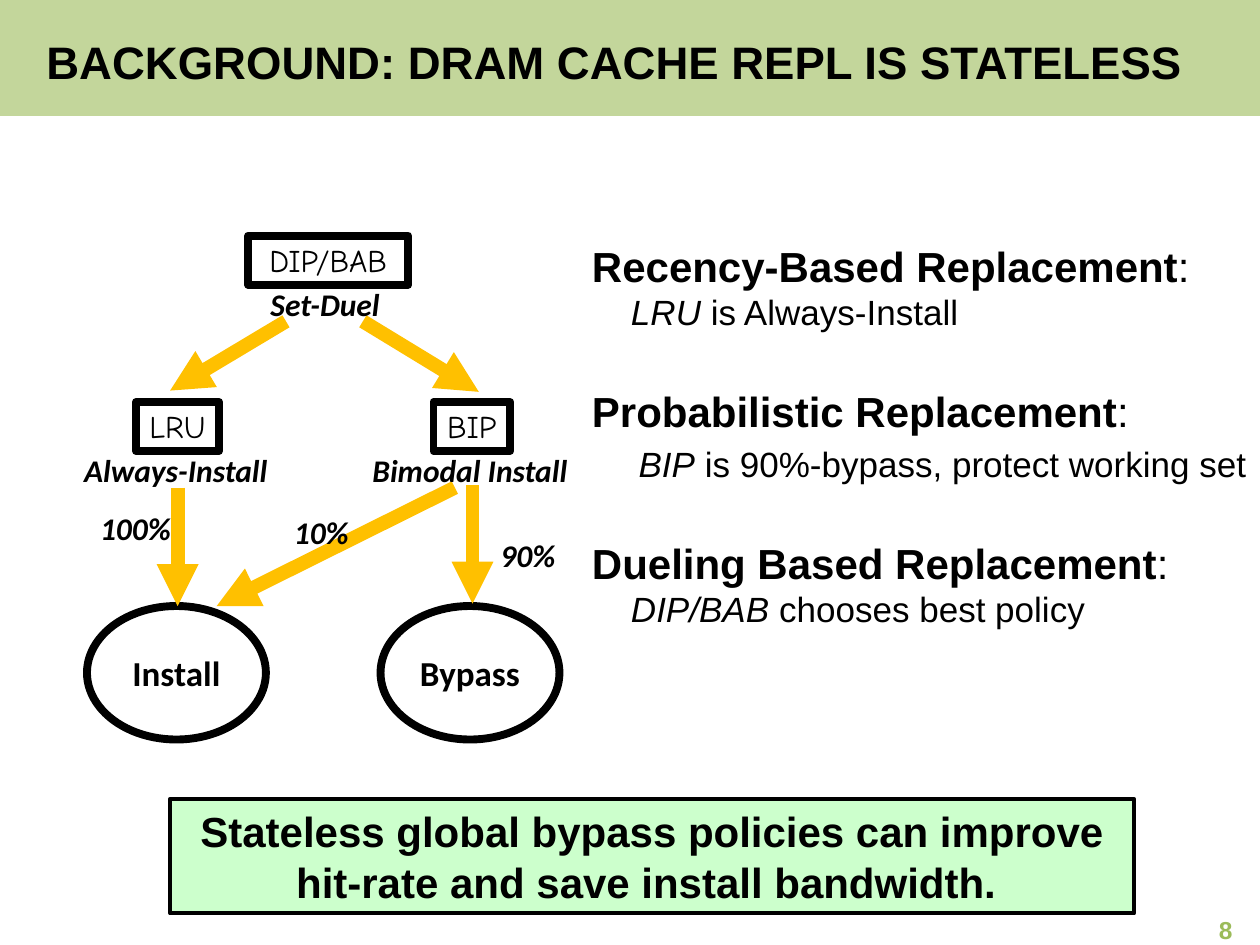
from lxml import etree
from pptx import Presentation
from pptx.dml.color import RGBColor
from pptx.enum.shapes import MSO_CONNECTOR, MSO_SHAPE
from pptx.enum.text import MSO_ANCHOR, PP_ALIGN
from pptx.oxml.ns import qn
from pptx.util import Inches, Pt

COLORS = {
    "band": "C3D69B", "ink": "000000", "arrow": "FFC000",
    "takeaway": "CCFFCC", "number": "9BBB59",
}


def rgb(name):
    return RGBColor.from_string(COLORS[name])


def style(r, size, font="Arial", color="ink", bold=False, italic=False):
    r.font.size, r.font.name = Pt(size), font
    r.font.bold, r.font.italic = bold, italic
    r.font.color.rgb = rgb(color)


def write(sp, text, size, align=PP_ALIGN.CENTER, anchor=MSO_ANCHOR.MIDDLE,
          wrap=True, side=0.1, **look):
    tf = sp.text_frame
    tf.word_wrap, tf.vertical_anchor = wrap, anchor
    tf.margin_top = tf.margin_bottom = Inches(0.04)
    tf.margin_left = tf.margin_right = Inches(side)
    tf.text = text
    p = tf.paragraphs[0]
    p.alignment = align
    style(p.runs[0], size, **look)


def write_label(sp, text, **look):
    # One centred line that may use the full width of its box
    write(sp, text, 18, anchor=MSO_ANCHOR.TOP, wrap=False, side=0, **look)


def add_box(s, kind, box, fill=None, line=None):
    sp = s.shapes.add_shape(kind, *map(Inches, box))
    sp.shadow.inherit = False
    if fill:
        sp.fill.solid()
        sp.fill.fore_color.rgb = rgb(fill)
    else:
        sp.fill.background()
    if line:
        sp.line.color.rgb = rgb("ink")
        sp.line.width = Pt(line)
    else:
        sp.line.fill.background()
    return sp


def add_textbox(s, *box):
    return s.shapes.add_textbox(*map(Inches, box))


def add_arrow(s, x1, y1, x2, y2):
    c = s.shapes.add_connector(MSO_CONNECTOR.STRAIGHT,
                               *map(Inches, (x1, y1, x2, y2)))
    c.line.color.rgb = rgb("arrow")
    c.line.width = Pt(8)
    etree.SubElement(c.line._get_or_add_ln(), qn("a:tailEnd"), type="triangle")
    etree.SubElement(c._element.spPr, qn("a:effectLst"))


def add_header(s, x, y, w, h):
    add_box(s, MSO_SHAPE.RECTANGLE, (x, y, w, h), fill="band")
    tb = add_textbox(s, x + 0.27, y + 0.22, w - 0.27, 0.53)
    write(tb, "BACKGROUND: DRAM CACHE REPL IS STATELESS", 26,
          align=PP_ALIGN.LEFT, bold=True)


def add_policy_tree(s, x, y):
    # Outcomes
    for dx, text in ((0.12, "Install"), (2.45, "Bypass")):
        sp = add_box(s, MSO_SHAPE.OVAL, (x + dx, y + 2.94, 1.42, 1.06), line=4.5)
        write(sp, text, 20, font="Calibri", bold=True)
    # Arrows from the duel to policies, then to outcomes
    for x1, y1, x2, y2 in ((1.7, 0.68, 0.78, 1.23), (2.31, 0.68, 3.23, 1.24),
                           (0.84, 2, 0.84, 2.94), (3.18, 1.98, 3.18, 2.92),
                           (3.04, 2, 1.15, 2.94)):
        add_arrow(s, x + x1, y + y1, x + x2, y + y2)
    # Policies
    for dx, dy, w, text in ((1.4, 0, 1.27, "DIP/BAB"), (0.51, 1.32, 0.66, "LRU"),
                            (2.87, 1.32, 0.61, "BIP")):
        sp = add_box(s, MSO_SHAPE.RECTANGLE, (x + dx, y + dy, w, 0.39), line=4.5)
        write_label(sp, text, font="Comic Neue")
    # Captions and shares
    for dx, dy, w, text in ((1.48, 0.35, 1.06, "Set-Duel"),
                            (0, 1.67, 1.65, "Always-Install"),
                            (2.29, 1.67, 1.74, "Bimodal Install"),
                            (0.13, 2.13, 0.75, "100%"),
                            (1.67, 2.16, 0.62, "10%"),
                            (3.31, 2.34, 0.62, "90%")):
        write_label(add_textbox(s, x + dx, y + dy, w, 0.39), text,
                    font="Calibri", bold=True, italic=True)


def add_line(p, parts, before, indent=0):
    p.space_before = Pt(before)
    p._p.get_or_add_pPr().set("marL", str(Inches(indent)))
    for text, size, bold, italic in parts:
        r = p.add_run()
        r.text = text
        style(r, size, bold=bold, italic=italic)


def add_explanations(s, x, y, w, h):
    tf = add_textbox(s, x, y, w, h).text_frame
    tf.word_wrap = True
    tf.margin_top, tf.margin_right = Inches(0.05), 0
    # Heading, policy, description, indent and gap above the description
    topics = (
        ("Recency-Based Replacement", "LRU", " is Always-Install", 0.31, 0),
        ("Probabilistic Replacement", "BIP",
         " is 90%-bypass, protect working set", 0.37, 4),
        ("Dueling Based Replacement", "DIP/BAB", " chooses best policy", 0.31, 0),
    )
    for i, (heading, policy, detail, indent, gap) in enumerate(topics):
        p = tf.add_paragraph() if i else tf.paragraphs[0]
        add_line(p, ((heading, 24, True, False), (":", 24, False, False)),
                 30 if i else 0)
        add_line(tf.add_paragraph(),
                 ((policy, 20, False, True), (detail, 20, False, False)),
                 gap, indent)


def add_takeaway(s, x, y, w, h):
    sp = add_box(s, MSO_SHAPE.RECTANGLE, (x, y, w, h), fill="takeaway", line=2.25)
    write(sp, "Stateless global bypass policies can improve hit-rate "
              "and save install bandwidth. ", 24, bold=True)


def add_slide_number(s, x, y, w, h):
    write(add_textbox(s, x, y, w, h), "8", 14, align=PP_ALIGN.RIGHT,
          color="number", bold=True)


def main():
    prs = Presentation()
    prs.slide_width, prs.slide_height = Inches(10), Inches(7.5)
    s = prs.slides.add_slide(prs.slide_layouts[6])
    add_header(s, 0, 0, 10, 0.92)
    add_policy_tree(s, 0.57, 1.87)
    add_explanations(s, 4.6, 1.86, 5.4, 3.6)
    add_takeaway(s, 1.35, 6.34, 7.65, 0.91)
    add_slide_number(s, 7.55, 7.25, 2.33, 0.26)
    prs.save("out.pptx")


if __name__ == "__main__":
    main()
